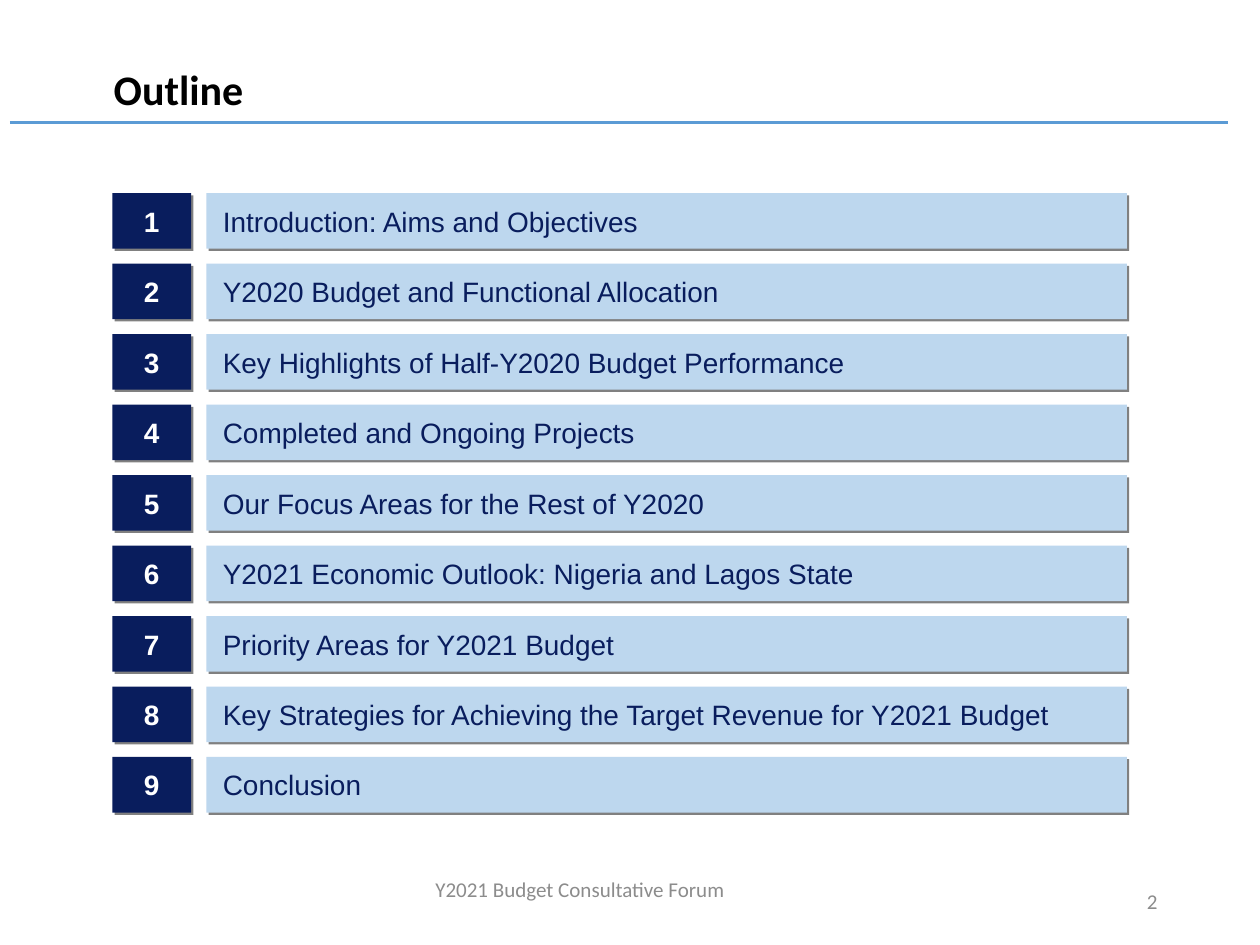
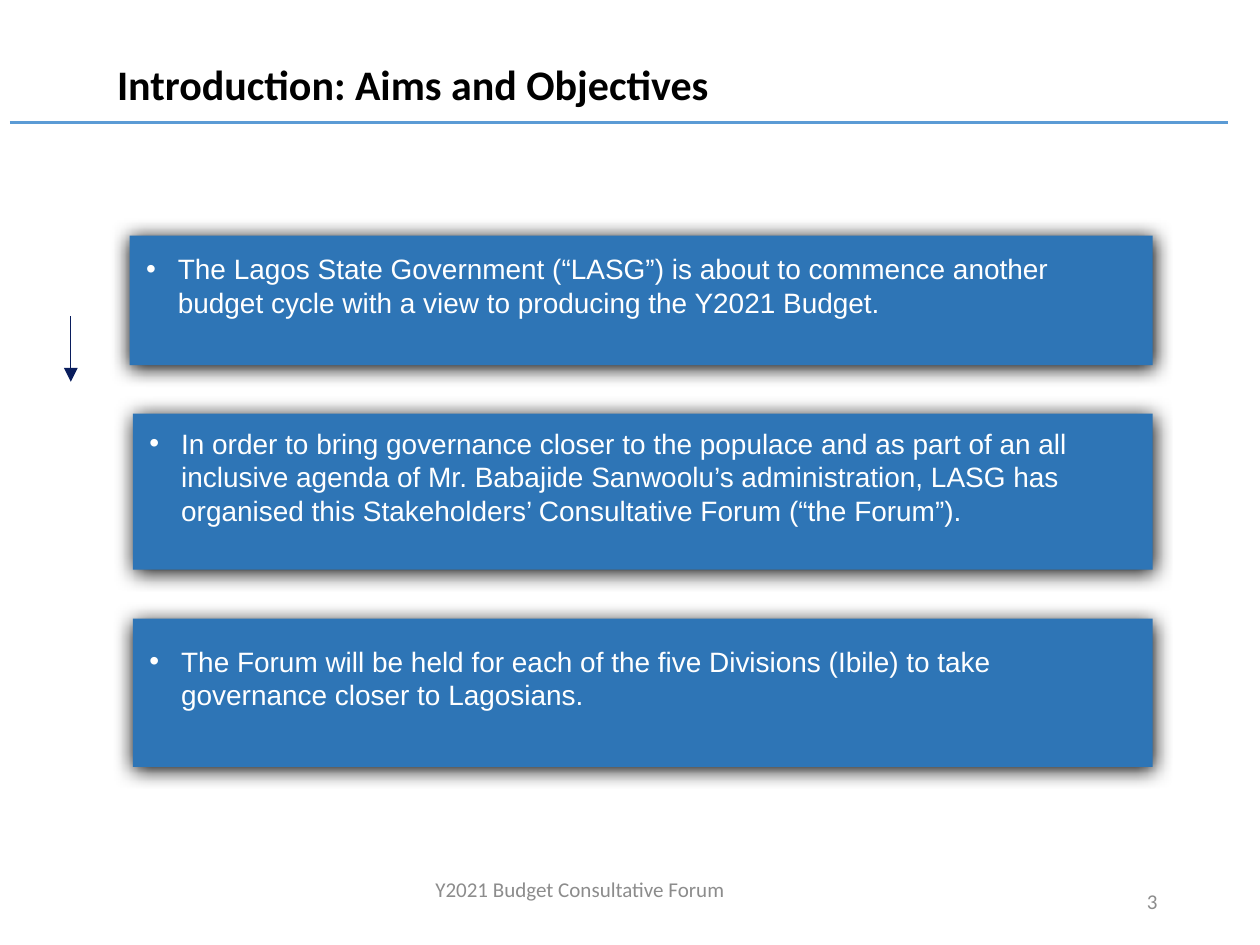
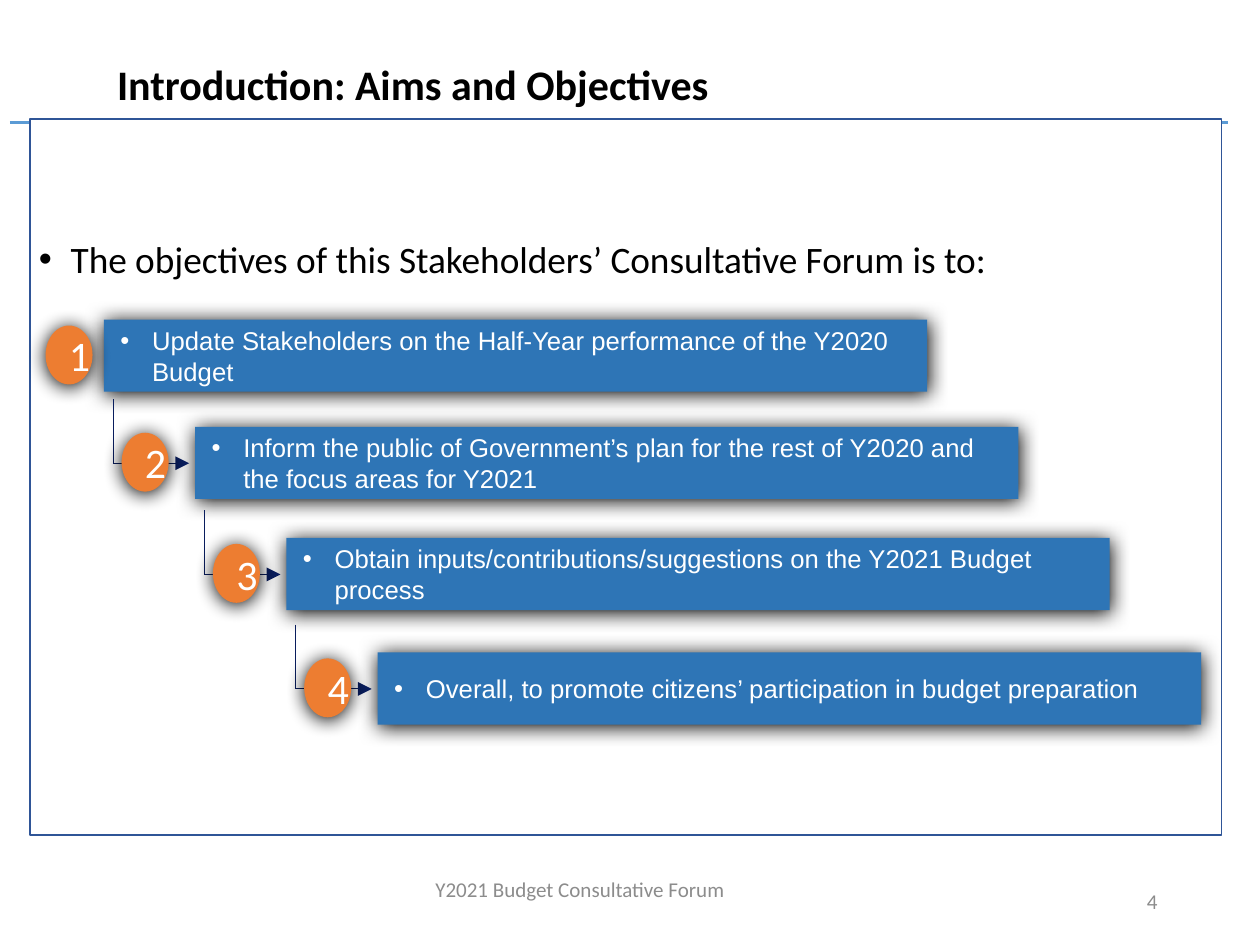
"""Builds three slides of a budget consultative forum deck."""
from lxml.etree import SubElement
from pptx import Presentation
from pptx.dml.color import RGBColor
from pptx.enum.shapes import MSO_CONNECTOR, MSO_SHAPE
from pptx.enum.text import MSO_ANCHOR, PP_ALIGN
from pptx.oxml.ns import qn
from pptx.util import Cm, Pt

RECT, OVAL = MSO_SHAPE.RECTANGLE, MSO_SHAPE.OVAL
LINE = MSO_CONNECTOR.STRAIGHT
TOP, MIDDLE, BOTTOM = MSO_ANCHOR.TOP, MSO_ANCHOR.MIDDLE, MSO_ANCHOR.BOTTOM
LEFT, CENTER, RIGHT = PP_ALIGN.LEFT, PP_ALIGN.CENTER, PP_ALIGN.RIGHT

BLACK = RGBColor(0x00, 0x00, 0x00)
WHITE = RGBColor(0xFF, 0xFF, 0xFF)
GRAY = RGBColor(0x8C, 0x8C, 0x8C)
NAVY = RGBColor(0x09, 0x1D, 0x5D)
PALE = RGBColor(0xBD, 0xD7, 0xEE)
BLUE = RGBColor(0x2E, 0x75, 0xB6)
SKY = RGBColor(0x5B, 0x9B, 0xD5)
EDGE = RGBColor(0x2F, 0x55, 0x97)
ORANGE = RGBColor(0xED, 0x7D, 0x31)

HEAD, BODY = "Calibri", "Arial"
HARD = ("808080", 0, 1.4, 45)
SOFT = ("000000", 8.5, 1, 90)
EVEN = (0.25, 0.25, 0.25, 0.25)
SLIM = (0.25, 0.13, 0.25, 0.13)


class Deck:
    def __init__(self):
        self.prs = Presentation()
        self.prs.slide_width = Cm(19.05)
        self.prs.slide_height = Cm(14.28)
        self.slide = None

    def start(self, title, left, top, width):
        self.slide = self.prs.slides.add_slide(self.prs.slide_layouts[6])
        self.line(0.15, 1.85, 18.57, 1.85, SKY, 1)
        self.text((left, top, width, 1.52), title, 18, BLACK, bold=True, anchor=BOTTOM)

    def finish(self, number):
        self.text((5.55, 13.05, 6.43, 0.76), "Y2021 Budget Consultative Forum", 9, GRAY, align=CENTER)
        self.text((13.46, 13.23, 4.29, 0.76), str(number), 9, GRAY, align=RIGHT)

    def label(self, shape, text, size, color, font=HEAD, bold=False, align=LEFT,
              anchor=MIDDLE, pads=SLIM, bullet=False):
        frame = shape.text_frame
        frame.word_wrap = True
        frame.vertical_anchor = anchor
        frame.margin_left, frame.margin_top, frame.margin_right, frame.margin_bottom = map(Cm, pads)
        para = frame.paragraphs[0]
        para.text = text
        para.alignment = align
        if bullet:
            props = para._p.get_or_add_pPr()
            props.set("marL", str(Cm(0.48)))
            props.set("indent", str(-Cm(0.48)))
            SubElement(props, qn("a:buFont"), typeface="Arial")
            SubElement(props, qn("a:buChar"), char="•")
        para.font.name = font
        para.font.size = Pt(size)
        para.font.bold = bold
        para.font.color.rgb = color

    def text(self, box, text, size, color, **style):
        self.label(self.slide.shapes.add_textbox(*map(Cm, box)), text, size, color, **style)

    def block(self, box, fill, text, size, color, kind=RECT, shade=None, edge=None, **style):
        shape = self.slide.shapes.add_shape(kind, *map(Cm, box))
        shape.shadow.inherit = False
        shape.fill.solid()
        shape.fill.fore_color.rgb = fill
        if edge:
            shape.line.color.rgb = edge
            shape.line.width = Pt(0.75)
        else:
            shape.line.fill.background()
        if shade:
            self.shade(shape, *shade)
        self.label(shape, text, size, color, **style)

    def shade(self, shape, color, blur, dist, angle):
        effects = shape._element.spPr.find(qn("a:effectLst"))
        outer = SubElement(effects, qn("a:outerShdw"), blurRad=str(Pt(blur)), dist=str(Pt(dist)),
                           dir=str(angle * 60000), algn="ctr", rotWithShape="0")
        SubElement(outer, qn("a:srgbClr"), val=color)

    def panel(self, box, text, size, pads=EVEN):
        self.block(box, BLUE, text, size, WHITE, shade=SOFT, font=BODY, pads=pads, bullet=True)

    def line(self, x1, y1, x2, y2, color=NAVY, width=0.5, arrow=False):
        link = self.slide.shapes.add_connector(LINE, *map(Cm, (x1, y1, x2, y2)))
        link.line.color.rgb = color
        link.line.width = Pt(width)
        props = link._element.spPr
        if arrow:
            SubElement(props.find(qn("a:ln")), qn("a:tailEnd"), type="triangle")
        SubElement(props, qn("a:effectLst"))


def outline(deck):
    topics = [
        "Introduction: Aims and Objectives",
        "Y2020 Budget and Functional Allocation",
        "Key Highlights of Half-Y2020 Budget Performance",
        "Completed and Ongoing Projects",
        "Our Focus Areas for the Rest of Y2020",
        "Y2021 Economic Outlook: Nigeria and Lagos State",
        "Priority Areas for Y2021 Budget",
        "Key Strategies for Achieving the Target Revenue for Y2021 Budget",
        "Conclusion",
    ]
    deck.start("Outline", 1.47, 0.33, 15.67)
    for i, topic in enumerate(topics):
        top = 2.92 + 1.065 * i
        deck.block((3.12, top, 13.92, 0.84), PALE, topic, 12, NAVY,
                   shade=HARD, font=BODY, pads=EVEN)
        deck.block((1.7, top, 1.19, 0.84), NAVY, str(i + 1), 12, WHITE,
                   shade=HARD, font=BODY, pads=EVEN, bold=True, align=CENTER)
    deck.finish(2)


def aims(deck):
    panels = [
        (1.96, 3.56, 1.96, "The Lagos State Government (“LASG”) is about to commence another "
         "budget cycle with a view to producing the Y2021 Budget."),
        (2.01, 6.25, 2.36, "In order to bring governance closer to the populace and as part of an "
         "all inclusive agenda of Mr. Babajide Sanwoolu’s administration, LASG has organised this "
         "Stakeholders’ Consultative Forum (“the Forum”)."),
        (2.01, 9.35, 2.24, "The Forum will be held for each of the five Divisions (Ibile) to take "
         "governance closer to Lagosians."),
    ]
    deck.start("Introduction: Aims and Objectives", 1.52, 0.25, 17.02)
    for left, top, height, text in panels:
        deck.panel((left, top, 17.43 - left, height), text, 12, (0.25, 0.25, 0.25, 0.7))
    deck.line(1.07, 4.78, 1.07, 5.77, arrow=True)
    deck.finish(3)


def goals(deck):
    steps = [
        (4.83, "Update Stakeholders on the Half-Year performance of the Y2020 Budget"),
        (6.45, "Inform the public of Government’s plan for the rest of Y2020 and the focus areas "
         "for Y2021"),
        (8.13, "Obtain inputs/contributions/suggestions on the Y2021 Budget process"),
        (9.86, "Overall, to promote citizens’ participation in budget preparation"),
    ]
    deck.start("Introduction: Aims and Objectives", 1.52, 0.25, 17.02)
    deck.block((0.46, 1.8, 18.01, 10.82), WHITE,
               "The objectives of this Stakeholders’ Consultative Forum is to:", 16, BLACK,
               edge=EDGE, anchor=TOP, pads=(0.13, 1.77, 0.13, 0.13), bullet=True)
    for i, (top, text) in enumerate(steps):
        left = 1.57 + 1.38 * i
        deck.panel((left, top, 12.45, 1.09), text, 11)
        if i:
            bend = left - 1.24
            deck.line(bend, top - 0.42, bend, top + 0.55)
            deck.line(bend, top + 0.55, left - 0.09, top + 0.55, arrow=True)
        badge = left - (1.11 if i else 0.88)
        deck.block((badge, top + 0.09, 0.71, 0.89), ORANGE, str(i + 1), 18, WHITE,
                   kind=OVAL, shade=SOFT, align=CENTER)
    deck.finish(4)


def main():
    deck = Deck()
    outline(deck)
    aims(deck)
    goals(deck)
    deck.prs.save("out.pptx")


if __name__ == "__main__":
    main()
